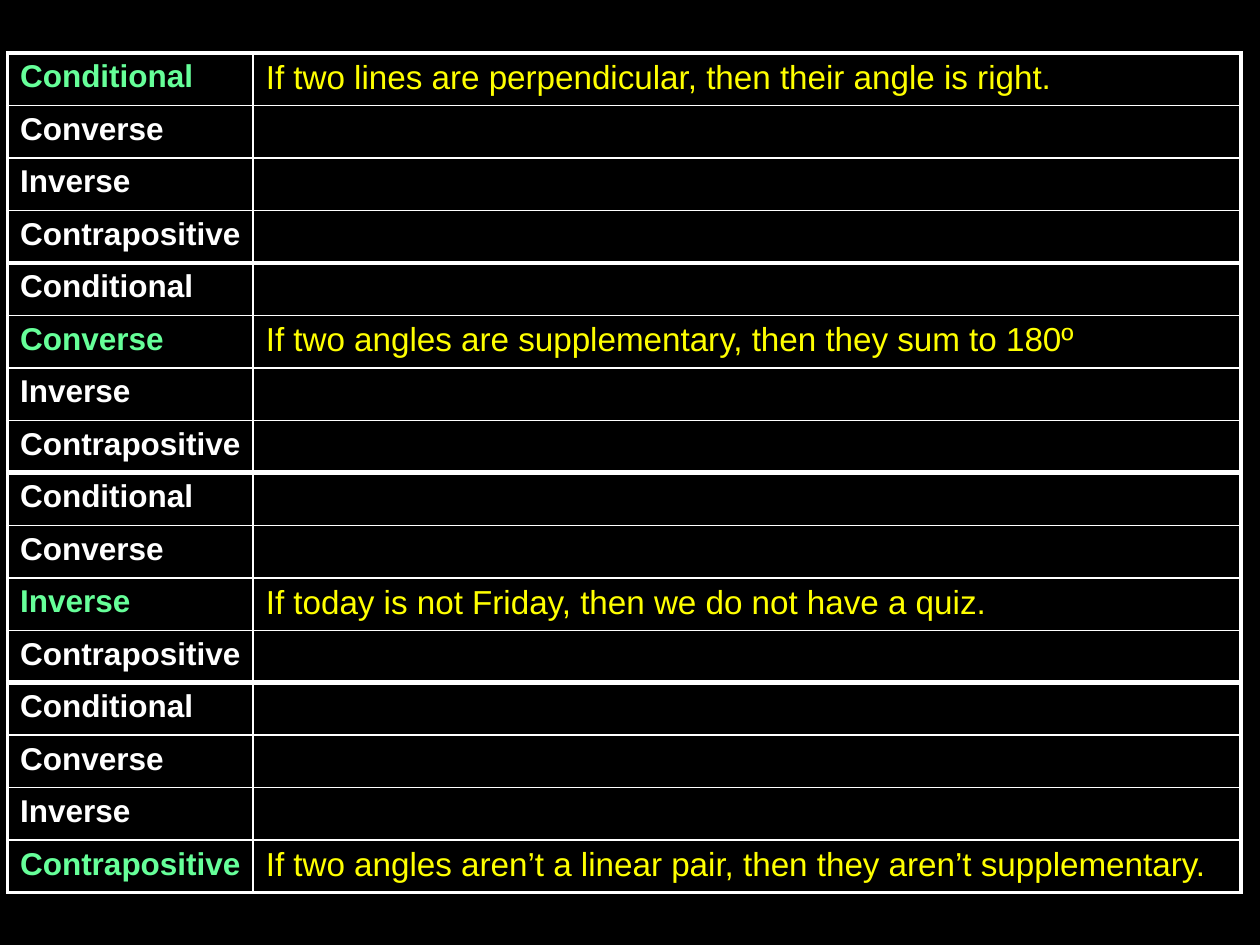
import dataclasses
import pptx
import pptx.dml.color
import pptx.oxml
import pptx.oxml.ns
import pptx.util

Inches = pptx.util.Inches
Pt = pptx.util.Pt
RGB = pptx.dml.color.RGBColor.from_string


@dataclasses.dataclass(frozen=True)
class Theme:
    back: str = "000000"
    plain: str = "FFFFFF"
    given: str = "66FF99"
    claim: str = "FFFF00"
    font: str = "Arial"
    label: float = 18
    body: float = 19
    thin: float = 1
    frame: float = 2.25
    split: float = 3


THEME = Theme()
FORMS = ["Conditional", "Converse", "Inverse", "Contrapositive"]
CLAIMS = [
    "If two lines are perpendicular, then their angle is right.",
    "If two angles are supplementary, then they sum to 180º",
    "If today is not Friday, then we do not have a quiz.",
    "If two angles aren’t a linear pair, then they aren’t supplementary.",
]


def add_edge(cell, side, width):
    props = cell._tc.get_or_add_tcPr()
    props.append(pptx.oxml.parse_xml(
        f'<a:ln{side} {pptx.oxml.ns.nsdecls("a")} w="{Pt(width)}">'
        f'<a:solidFill><a:srgbClr val="{THEME.plain}"/></a:solidFill>'
        f'</a:ln{side}>'))


def style_cell(cell, text, size, color, bold, edges):
    for side, width in edges.items():
        add_edge(cell, side, width)
    cell.fill.solid()
    cell.fill.fore_color.rgb = RGB(THEME.back)
    cell.margin_right = Inches(0.05)
    cell.text = text
    font = cell.text_frame.paragraphs[0].font
    font.name, font.size, font.bold = THEME.font, Pt(size), bold
    font.color.rgb = RGB(color)


def add_grid(slide, left, top, width, height):
    size = len(FORMS)
    count = size * len(CLAIMS)
    grid = slide.shapes.add_table(count, 2, left, top, width, height).table
    grid.first_row = grid.horz_banding = False
    grid.columns[0].width = Inches(1.95)
    grid.columns[1].width = width - Inches(1.95)

    def rule(line):
        if line in (0, count):
            return THEME.frame
        return THEME.thin if line % size else THEME.split

    for row in range(count):
        group, form = divmod(row, size)
        given = group == form
        edges = {"T": rule(row), "B": rule(row + 1)}
        style_cell(grid.cell(row, 0), FORMS[form], THEME.label,
                   THEME.given if given else THEME.plain, True,
                   {"L": THEME.frame, "R": THEME.thin, **edges})
        style_cell(grid.cell(row, 1), CLAIMS[group] if given else "",
                   THEME.body, THEME.claim, False,
                   {"L": THEME.thin, "R": THEME.frame, **edges})


def main():
    deck = pptx.Presentation()
    deck.slide_width, deck.slide_height = Inches(10), Inches(7.5)
    slide = deck.slides.add_slide(deck.slide_layouts[6])
    slide.background.fill.solid()
    slide.background.fill.fore_color.rgb = RGB(THEME.back)
    add_grid(slide, Inches(0.06), Inches(0.42), Inches(9.79), Inches(6.67))
    deck.save("out.pptx")


if __name__ == "__main__":
    main()
